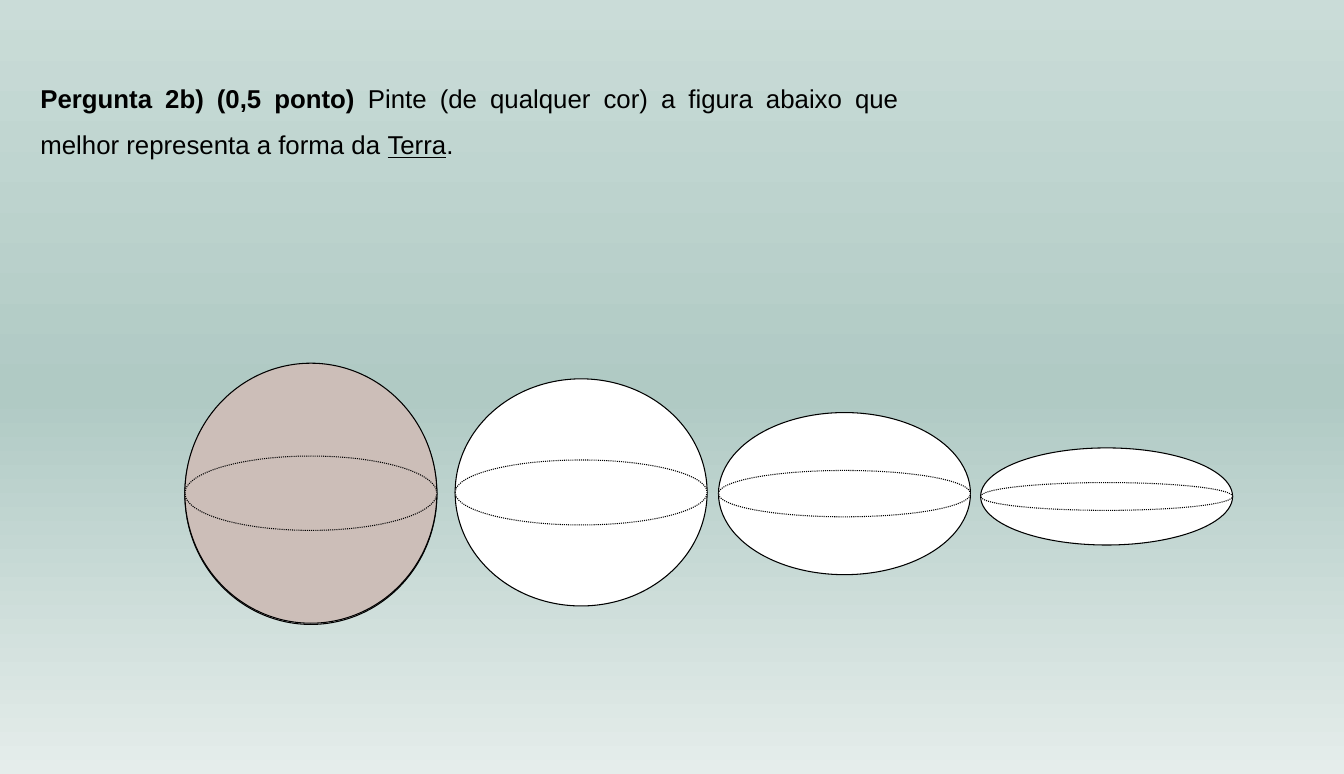
from copy import deepcopy

from pptx import Presentation
from pptx.dml.color import RGBColor
from pptx.enum.dml import MSO_LINE
from pptx.enum.shapes import MSO_SHAPE
from pptx.enum.text import MSO_ANCHOR, MSO_AUTO_SIZE, PP_ALIGN
from pptx.oxml.ns import qn
from pptx.util import Cm, Pt

QUESTION = [
    ("Pergunta 2b) (0,5 ponto)", {"bold": True}),
    (" Pinte (de qualquer cor) a figura abaixo que melhor representa a forma da ", {"bold": False}),
    ("Terra", {"bold": False, "underline": True}),
    (".", {"bold": False}),
]
QUESTION_AREA = {"left": Cm(0.74), "top": Cm(1.52), "width": Cm(21.62), "height": Cm(2.41)}
BACKGROUND_STOPS = [(0, "CADCD8"), (0.51, "B0CAC4"), (1, "E5EDEB")]

# left, centre height and full height in centimetres, then fill
GLOBES = [
    (4.55, 12.17, 6.4, "FFFFFF"),
    (11.2, 12.12, 5.59, "FFFFFF"),
    (17.68, 12.15, 3.99, "FFFFFF"),
    (24.13, 12.22, 2.39, "FFFFFF"),
    (4.55, 12.14, 6.4, "CCBEB8"),
]
GLOBE_WIDTH = 6.2
EQUATOR_RATIO = 0.286


def color(value):
    return RGBColor.from_string(value)


def apply(target, values):
    for name, value in values.items():
        setattr(target, name, value)


def paint_background(page):
    fill = page.background.fill
    fill.gradient()
    fill.gradient_angle = 270
    stop_list = page.element.find(".//" + qn("a:gsLst"))
    stop_list.append(deepcopy(stop_list[0]))
    for stop, (position, value) in zip(fill.gradient_stops, BACKGROUND_STOPS):
        stop.position = position
        stop.color.rgb = color(value)


def write_question(box):
    apply(box, QUESTION_AREA)
    frame = box.text_frame
    apply(frame, {"word_wrap": True, "auto_size": MSO_AUTO_SIZE.NONE,
                  "vertical_anchor": MSO_ANCHOR.TOP})
    para = frame.paragraphs[0]
    apply(para, {"alignment": PP_ALIGN.JUSTIFY, "line_spacing": 1.5, "space_before": Pt(0)})
    for text, style in QUESTION:
        span = para.add_run()
        span.text = text
        apply(span.font, {"name": "Arial", "size": Pt(18), **style})
        span.font.color.rgb = color("000000")


def draw_globe(page, left, middle, height, fill):
    """Draw the outline and its dotted equator as one group."""
    globe = page.shapes.add_group_shape()
    for part_height, dash in ((height, MSO_LINE.SOLID),
                              (height * EQUATOR_RATIO, MSO_LINE.ROUND_DOT)):
        ellipse = globe.shapes.add_shape(
            MSO_SHAPE.OVAL, Cm(left), Cm(middle - part_height / 2),
            Cm(GLOBE_WIDTH), Cm(part_height))
        ellipse.shadow.inherit = False
        ellipse.fill.solid()
        ellipse.fill.fore_color.rgb = color(fill)
        ellipse.line.color.rgb = color("000000")
        apply(ellipse.line, {"width": Pt(0.75), "dash_style": dash})


def main():
    deck = Presentation()
    apply(deck, {"slide_width": Cm(33.07), "slide_height": Cm(19.05)})
    page = deck.slides.add_slide(deck.slide_layouts[5])
    paint_background(page)
    write_question(page.shapes.title)
    for globe in GLOBES:
        draw_globe(page, *globe)
    deck.save("out.pptx")


if __name__ == "__main__":
    main()
